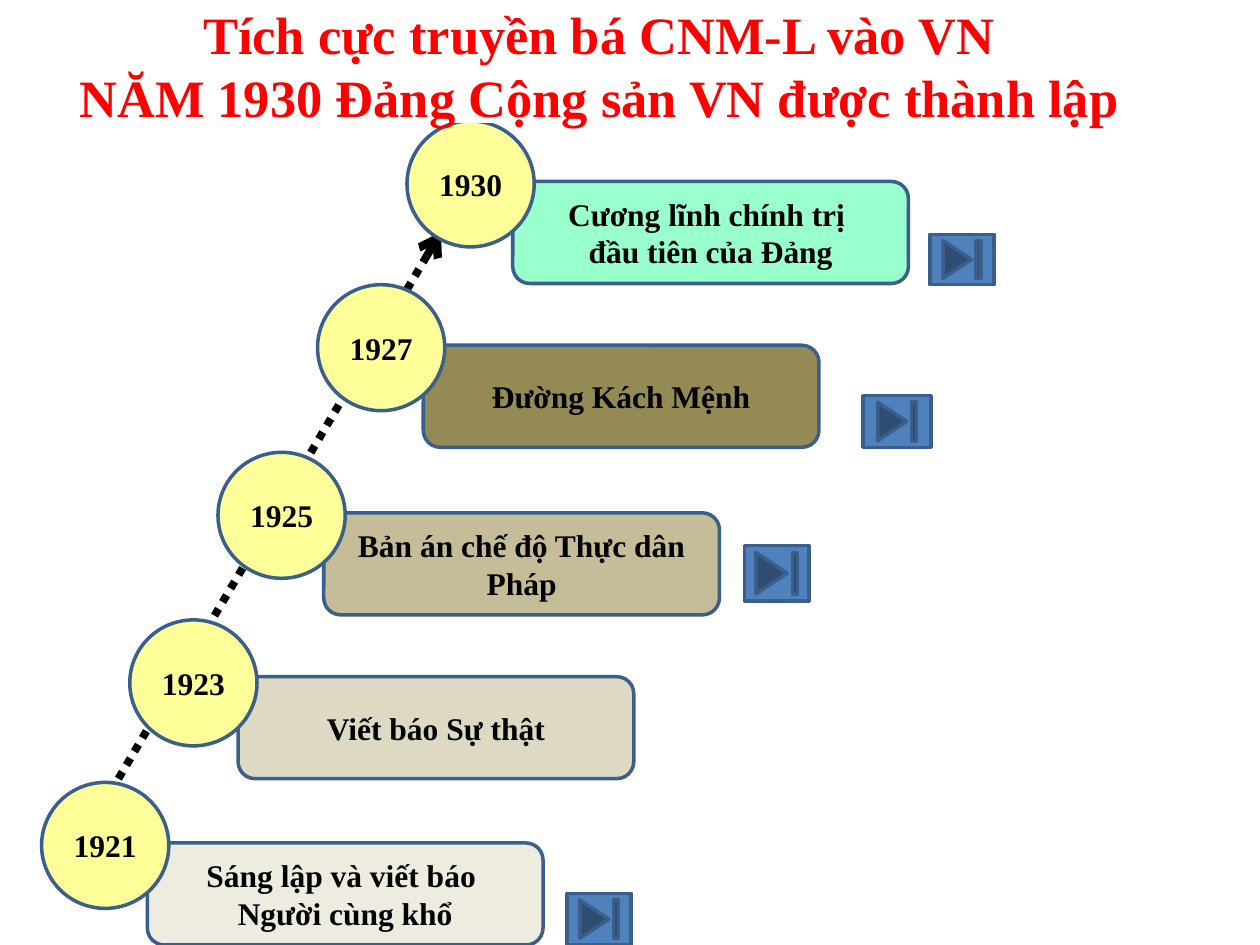
from dataclasses import dataclass

from lxml.etree import SubElement
from pptx import Presentation
from pptx.dml.color import RGBColor
from pptx.enum.dml import MSO_LINE
from pptx.enum.shapes import MSO_CONNECTOR, MSO_SHAPE
from pptx.enum.text import MSO_ANCHOR, MSO_AUTO_SIZE, PP_ALIGN
from pptx.oxml.ns import qn
from pptx.util import Inches, Pt


@dataclass(frozen=True)
class Theme:
    font: str = "Times New Roman"
    title_size: int = 30
    body_size: int = 18
    outline_width: int = 2
    arrow_width: float = 4.5
    title: str = "FF0000"
    text: str = "000000"
    background: str = "FFFFFF"
    outline: str = "3A5F8C"
    year: str = "FFFF99"
    button: str = "4F81BD"


@dataclass(frozen=True)
class Milestone:
    year: str
    event: str
    left: float
    top: float
    color: str
    card_offset: tuple = (0.84, 0.48)
    button: tuple = ()


THEME = Theme()
YEAR_SIZE = (1.01, 1)
CARD_SIZE = (3.14, 0.81)
TITLE = "Tích cực truyền bá CNM-L vào VN\nNĂM 1930 Đảng Cộng sản VN được thành lập"

MILESTONES = [
    Milestone("1921", "Sáng lập và viết báo \nNgười cùng khổ", 0.33, 6.21, "EEECE1",
              button=(4.5, 7.09, 0.51, 0.41)),
    Milestone("1923", "Viết báo Sự thật", 1.03, 4.92, "DDD9C3",
              card_offset=(0.86, 0.45)),
    Milestone("1925", "Bản án chế độ Thực dân Pháp", 1.73, 3.59, "C4BD97",
              button=(5.91, 4.33, 0.51, 0.44)),
    Milestone("1927", "Đường Kách Mệnh", 2.52, 2.26, "948A54",
              button=(6.85, 3.14, 0.54, 0.41)),
    Milestone("1930", "Cương lĩnh chính trị \nđầu tiên của Đảng", 3.23, 0.96, "99FFCC",
              button=(7.38, 1.86, 0.51, 0.4)),
]


def rgb(color):
    return RGBColor.from_string(color)


def paint(shape, fill, outline):
    shape.fill.solid()
    shape.fill.fore_color.rgb = rgb(fill)
    shape.line.color.rgb = rgb(outline)
    shape.line.width = Pt(THEME.outline_width)


def write(shape, text, size, color):
    frame = shape.text_frame
    frame.text = text
    frame.word_wrap = True
    frame.auto_size = MSO_AUTO_SIZE.NONE
    frame.vertical_anchor = MSO_ANCHOR.MIDDLE
    for paragraph in frame.paragraphs:
        paragraph.alignment = PP_ALIGN.CENTER
        for run in paragraph.runs:
            run.font.name = THEME.font
            run.font.size = Pt(size)
            run.font.bold = True
            run.font.color.rgb = rgb(color)


def add_block(slide, preset, box, fill, text=""):
    block = slide.shapes.add_shape(preset, *map(Inches, box))
    block.shadow.inherit = False
    paint(block, fill, THEME.outline)
    if text:
        write(block, text, THEME.body_size, THEME.text)


def add_timeline_arrow(slide, start, end):
    arrow = slide.shapes.add_connector(MSO_CONNECTOR.STRAIGHT,
                                       *map(Inches, start + end))
    arrow.line.color.rgb = rgb(THEME.text)
    arrow.line.width = Pt(THEME.arrow_width)
    arrow.line.dash_style = MSO_LINE.ROUND_DOT
    properties = arrow._element.spPr
    SubElement(properties.find(qn("a:ln")), qn("a:tailEnd"), type="arrow")
    SubElement(properties, qn("a:effectLst"))


def add_milestone(slide, milestone):
    dx, dy = milestone.card_offset
    card = (milestone.left + dx, milestone.top + dy, *CARD_SIZE)
    circle = (milestone.left, milestone.top, *YEAR_SIZE)
    add_block(slide, MSO_SHAPE.ROUNDED_RECTANGLE, card, milestone.color, milestone.event)
    add_block(slide, MSO_SHAPE.OVAL, circle, THEME.year, milestone.year)
    if milestone.button:
        add_block(slide, MSO_SHAPE.ACTION_BUTTON_END, milestone.button, THEME.button)


def place_title(slide):
    """Fill the title placeholder and bring it in front of the top circle."""
    title = slide.shapes.title
    title.left, title.top = Inches(0.42), Inches(0.08)
    title.width, title.height = Inches(8.67), Inches(0.88)
    paint(title, THEME.background, THEME.background)
    write(title, TITLE, THEME.title_size, THEME.title)
    slide.shapes._spTree.append(title._element)


def main():
    deck = Presentation()
    deck.slide_width, deck.slide_height = Inches(10), Inches(7.5)
    slide = deck.slides.add_slide(deck.slide_layouts.get_by_name("Title Only"))
    add_timeline_arrow(slide, (0.94, 6.18), (3.5, 1.84))
    for milestone in MILESTONES:
        add_milestone(slide, milestone)
    place_title(slide)
    deck.save("out.pptx")


if __name__ == "__main__":
    main()
